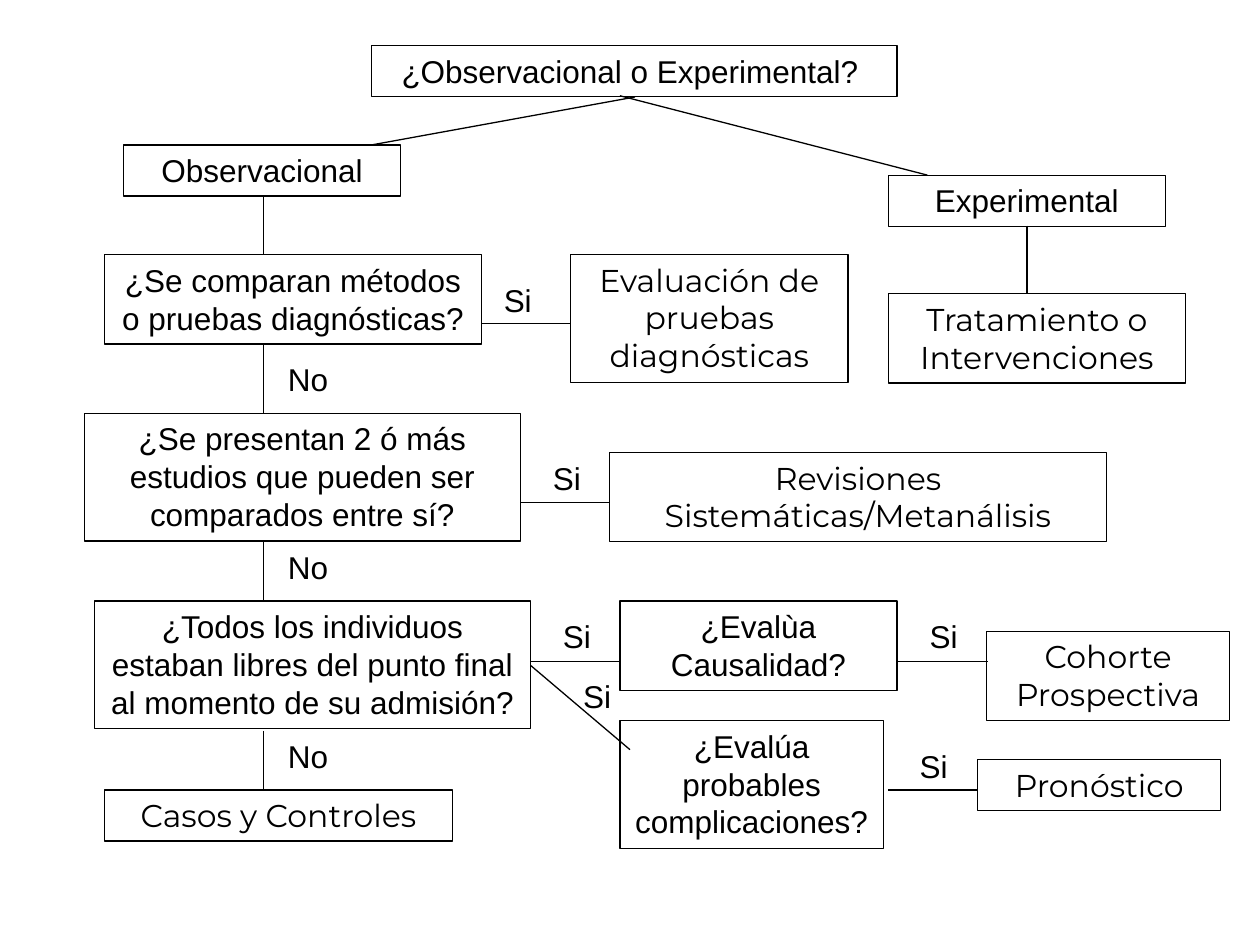
from lxml.etree import SubElement
from pptx import Presentation
from pptx.dml.color import RGBColor
from pptx.enum.shapes import MSO_CONNECTOR as Link, MSO_SHAPE as Form
from pptx.enum.text import MSO_ANCHOR as Anchor, MSO_AUTO_SIZE as Fit, PP_ALIGN as Align
from pptx.oxml.ns import qn
from pptx.util import Inches, Pt

INK = "000000"
ASK = "Arial"
STUDY = "Montserrat"
TRUNK = 2.09

NODES = [
    (2.95, 0.36, 4.17, 1, ASK, "¿Observacional o Experimental? "),
    (7.05, 1.39, 2.2, 1, ASK, "Experimental"),
    (7.05, 2.33, 2.36, 2, STUDY, "Tratamiento o Intervenciones"),
    (0.98, 1.15, 2.2, 1, ASK, "Observacional"),
    (0.83, 2.02, 2.99, 2, ASK, "¿Se comparan métodos o pruebas diagnósticas?"),
    (4.53, 2.02, 2.2, 3, STUDY, "Evaluación de pruebas diagnósticas"),
    (0.67, 3.28, 3.46, 3, ASK, "¿Se presentan 2 ó más estudios que pueden ser comparados entre sí?"),
    (4.84, 3.59, 3.94, 2, STUDY, "Revisiones Sistemáticas/Metanálisis"),
    (0.75, 4.77, 3.46, 3, ASK,
     "¿Todos los individuos estaban libres del punto final al momento de su admisión?"),
    (0.83, 6.27, 2.76, 1, STUDY, "Casos y Controles"),
    (4.92, 4.77, 2.2, 2, ASK, "¿Evalùa Causalidad?"),
    (7.83, 5.01, 1.93, 2, STUDY, "Cohorte Prospectiva"),
    (4.92, 5.72, 2.09, 3, ASK, "¿Evalúa probables complicaciones?"),
    (7.76, 6.03, 1.93, 1, STUDY, "Pronóstico"),
]
SLANTS = [(4.92, 0.76, 7.36, 1.39), (5.04, 0.77, 2.95, 1.15), (4.21, 5.28, 5, 5.95)]
DROPS = [(8.15, 1.79, 2.33), (TRUNK, 1.56, 2.02), (TRUNK, 2.73, 3.28),
         (TRUNK, 4.3, 4.76), (TRUNK, 5.8, 6.26)]
STEPS = [(3.82, 2.57), (4.13, 3.99), (4.21, 5.25), (7.13, 5.25), (7.05, 6.27)]
YES = [(3.9, 2.18), (4.29, 3.59), (4.37, 4.85), (7.28, 4.85), (7.2, 5.88), (4.53, 5.32)]
NO = [2.81, 4.3, 5.8]


def color(code):
    return RGBColor.from_string(code)


def high(rows):
    return Inches(0.1 + 0.305 * rows)


def write(shape, text, font, align):
    frame = shape.text_frame
    frame.word_wrap = True
    frame.auto_size = Fit.SHAPE_TO_FIT_TEXT
    frame.vertical_anchor = Anchor.TOP
    para = frame.paragraphs[0]
    para.alignment = align
    run = para.add_run()
    run.text = text
    run.font.name = font
    run.font.size = Pt(18)
    run.font.color.rgb = color(INK)


def stroke(line):
    line.color.rgb = color(INK)
    line.width = Pt(0.75)


def add_node(slide, x, y, wide, rows, font, text):
    box = slide.shapes.add_shape(
        Form.RECTANGLE, Inches(x), Inches(y), Inches(wide), high(rows))
    box.shadow.inherit = False
    box.fill.background()
    stroke(box.line)
    write(box, text, font, Align.CENTER)


def add_label(slide, x, y, wide, text, align):
    box = slide.shapes.add_textbox(Inches(x), Inches(y), Inches(wide), high(1))
    write(box, text, ASK, align)


def add_link(slide, *ends):
    link = slide.shapes.add_connector(Link.STRAIGHT, *map(Inches, ends))
    stroke(link.line)
    SubElement(link._element.spPr, qn("a:effectLst"))


def main():
    deck = Presentation()
    deck.slide_width, deck.slide_height = Inches(10), Inches(7.5)
    slide = deck.slides.add_slide(deck.slide_layouts[6])
    for ends in SLANTS:
        add_link(slide, *ends)
    for x, top, end in DROPS:
        add_link(slide, x, top, x, end)
    for x, y in STEPS:
        add_link(slide, x, y, x + 0.71, y)
    for node in NODES:
        add_node(slide, *node)
    for x, y in YES:
        add_label(slide, x, y, 0.47, "Si", Align.LEFT)
    for y in NO:
        add_label(slide, TRUNK, y, 0.71, "No", Align.CENTER)
    deck.save("out.pptx")


if __name__ == "__main__":
    main()
